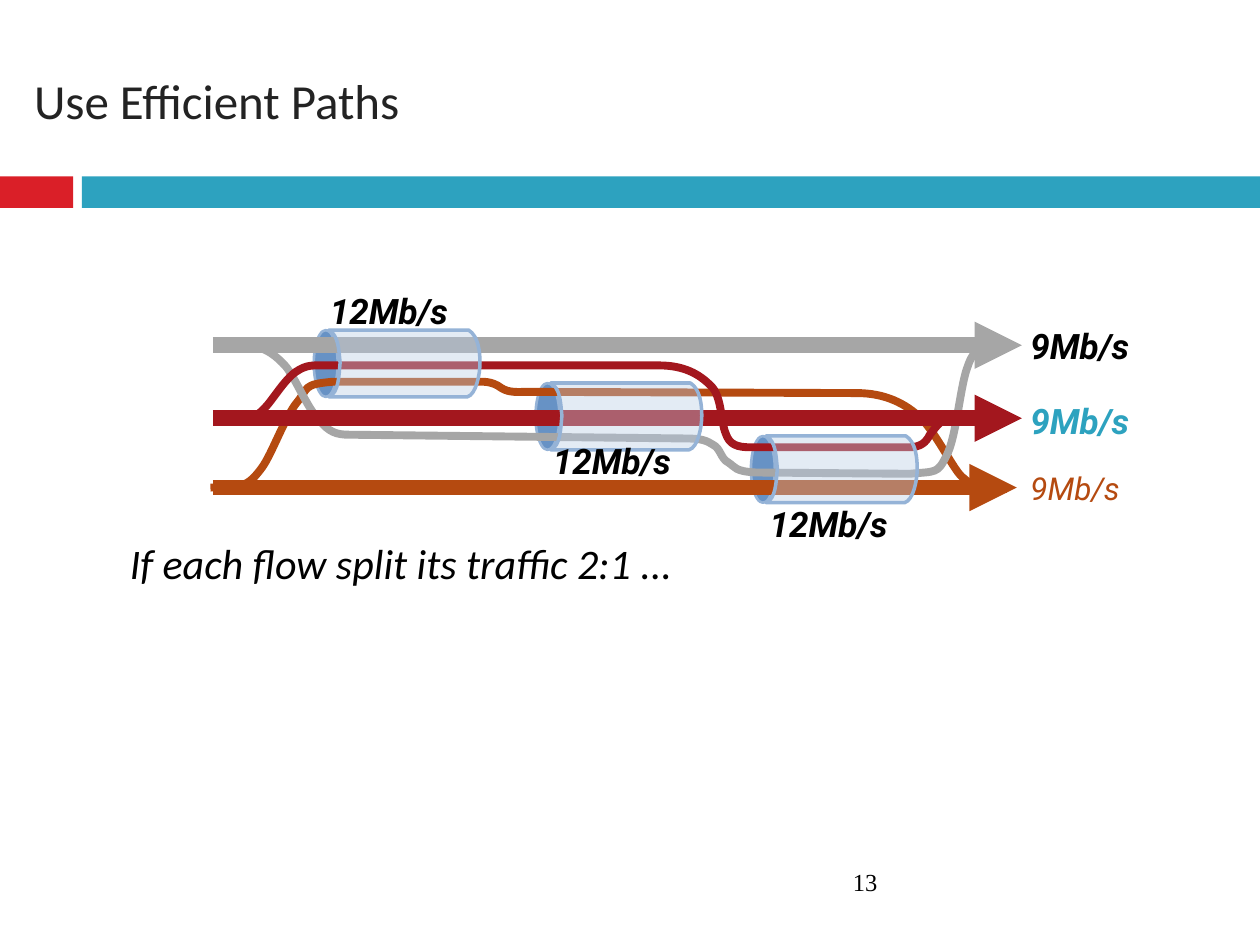
from dataclasses import dataclass

from lxml.etree import SubElement
from pptx import Presentation
from pptx.dml.color import RGBColor
from pptx.enum.shapes import MSO_CONNECTOR, MSO_SHAPE
from pptx.enum.text import MSO_ANCHOR, MSO_AUTO_SIZE, PP_ALIGN
from pptx.oxml.ns import qn
from pptx.util import Inches, Pt


@dataclass(frozen=True)
class Theme:
    black: str = "000000"
    title: str = "232323"
    red: str = "DA1F28"
    teal: str = "2DA2BF"
    orange: str = "B54A10"
    grey: str = "A6A6A6"
    crimson: str = "A3171E"
    pipe_fill: str = "B9CDE5"
    pipe_line: str = "95B3D7"
    pipe_end: str = "6792C5"
    title_size: int = 28
    body_size: int = 24
    label_size: int = 20
    small_label_size: int = 18
    number_size: int = 14
    text_font: str = "Calibri"
    label_font: str = "Roboto"
    number_font: str = "Times New Roman"


THEME = Theme()

FLOWS = [
    (THEME.orange, (1.69, 8.07), 3.87, [
        (1.67, 3.87), (1.89, 3.86),
        (1.96, 3.84, 2, 3.82, 2.08, 3.71), (2.16, 3.6, 2.26, 3.31, 2.36, 3.19),
        (2.45, 3.08, 2.4, 3.05, 2.64, 3.03), (3.77, 3.03),
        (3.83, 3.03, 3.9, 3.02, 3.98, 3.08), (4.04, 3.12, 4.12, 3.11, 4.18, 3.11),
        (6.8, 3.12), (7.02, 3.12, 7.19, 3.2, 7.32, 3.33),
        (7.44, 3.46, 7.56, 3.71, 7.63, 3.78), (7.7, 3.84, 7.75, 3.88, 7.85, 3.88),
        (7.99, 3.88)]),
    (THEME.grey, (1.69, 8.11), 2.74, [
        (1.8, 2.75), (2.04, 2.75),
        (2.12, 2.78, 2.18, 2.81, 2.27, 2.91), (2.35, 3.01, 2.44, 3.24, 2.53, 3.33),
        (2.61, 3.43, 2.67, 3.45, 2.77, 3.45), (5.44, 3.48),
        (5.58, 3.48, 5.61, 3.5, 5.66, 3.53), (5.72, 3.56, 5.72, 3.64, 5.78, 3.67),
        (5.84, 3.71, 5.83, 3.74, 6, 3.75), (7.22, 3.76),
        (7.43, 3.74, 7.44, 3.76, 7.51, 3.62), (7.59, 3.48, 7.62, 3.06, 7.68, 2.91),
        (7.73, 2.76, 7.79, 2.77, 7.85, 2.74), (8.01, 2.75)]),
    (THEME.crimson, (1.69, 8.11), 3.32, [
        (1.72, 3.33), (1.98, 3.32),
        (2.03, 3.3, 2.04, 3.3, 2.1, 3.24), (2.16, 3.18, 2.26, 3.01, 2.35, 2.95),
        (2.44, 2.89, 2.48, 2.9, 2.63, 2.9), (5.23, 2.9),
        (5.43, 2.9, 5.55, 2.97, 5.64, 3.06), (5.73, 3.14, 5.72, 3.35, 5.76, 3.44),
        (5.79, 3.53, 5.85, 3.55, 5.96, 3.55), (7.21, 3.55),
        (7.31, 3.55, 7.35, 3.51, 7.38, 3.45), (7.42, 3.4, 7.46, 3.34, 7.51, 3.33),
        (7.56, 3.33, 7.65, 3.33, 7.72, 3.33)]),
]
PIPE_OUTLINE = [
    (0, 0.53), (1.1, 0.53),
    (1.17, 0.51, 1.2, 0.35, 1.2, 0.26), (1.2, 0.18, 1.19, 0.05, 1.11, 0),
    (0, 0), (0.08, 0.04, 0.08, 0.17, 0.09, 0.26),
    (0.08, 0.36, 0.08, 0.5, 0, 0.53)]
PIPES = [(2.61, 2.62), (4.37, 3.04), (6.08, 3.46)]
PIPE_LABELS = [(2.52, 2.25), (4.29, 3.44), (6.01, 3.94)]


def color(value):
    return RGBColor.from_string(value)


def write_text(box, text, *, size, font, ink, bold=False, italic=False,
               anchor=MSO_ANCHOR.TOP, space_before=0, fit=MSO_AUTO_SIZE.NONE):
    frame = box.text_frame
    frame.word_wrap = True
    frame.auto_size = fit
    frame.vertical_anchor = anchor
    para = frame.paragraphs[0]
    para.alignment = PP_ALIGN.LEFT
    para.space_before = Pt(space_before)
    span = para.add_run()
    span.text = text
    span.font.size = Pt(size)
    span.font.name = font
    span.font.bold = bold
    span.font.italic = italic
    span.font.color.rgb = color(ink)
    return para


def place(box, left, top, width, height):
    box.left, box.top = Inches(left), Inches(top)
    box.width, box.height = Inches(width), Inches(height)


def add_label(page, text, left, top, width, height, **text_format):
    box = page.shapes.add_textbox(
        Inches(left), Inches(top), Inches(width), Inches(height))
    write_text(box, text, **text_format)


def paint(shape, fill=None, line=None, weight=0):
    shape.shadow.inherit = False
    if fill:
        shape.fill.solid()
        shape.fill.fore_color.rgb = color(fill)
    else:
        shape.fill.background()
    if line:
        shape.line.color.rgb = color(line)
        shape.line.width = Pt(weight)
    else:
        shape.line.fill.background()


def add_preset(page, kind, left, top, width, height, **style):
    shape = page.shapes.add_shape(
        kind, Inches(left), Inches(top), Inches(width), Inches(height))
    paint(shape, **style)
    return shape


def bend(straight, spots):
    curve = straight.makeelement(qn("a:cubicBezTo"))
    for x, y in spots:
        SubElement(curve, qn("a:pt"), x=str(x), y=str(y))
    straight.getparent().replace(straight, curve)


def add_outline(page, segments, left=0, top=0, closed=False, **style):
    routes = [[(Inches(left + x), Inches(top + y))
               for x, y in zip(segment[::2], segment[1::2])] for segment in segments]
    ends = [route[-1] for route in routes]
    builder = page.shapes.build_freeform(*ends[0])
    builder.add_line_segments(ends[1:], close=closed)
    shape = builder.convert_to_shape()
    straights = list(shape._element.spPr.iter(qn("a:lnTo")))
    for straight, route in zip(straights, routes[1:]):
        if len(route) == 3:
            bend(straight, [(x - shape.left, y - shape.top) for x, y in route])
    paint(shape, **style)
    return shape


def add_arrow(page, start, end, y, ink):
    arrow = page.shapes.add_connector(
        MSO_CONNECTOR.STRAIGHT, Inches(start), Inches(y), Inches(end), Inches(y))
    arrow.line.color.rgb = color(ink)
    arrow.line.width = Pt(9)
    properties = arrow._element.spPr
    SubElement(properties.find(qn("a:ln")), qn("a:tailEnd"), type="triangle")
    SubElement(properties, qn("a:effectLst"))


def add_pipe(page, left, top):
    pipe = add_outline(page, PIPE_OUTLINE, left, top, closed=True,
                       fill=THEME.pipe_fill, line=THEME.pipe_line, weight=2)
    tint = pipe._element.spPr.find(qn("a:solidFill"))[0]
    SubElement(tint, qn("a:alpha"), val="40000")


def add_pipe_end(page, left, top):
    end = add_preset(page, MSO_SHAPE.OVAL, left - 0.29, top + 0.17, 0.53, 0.19,
                     fill=THEME.pipe_end, line=THEME.pipe_line, weight=1.5)
    end.rotation = 270


def fill_placeholders(page):
    title, body = page.placeholders
    place(title, 0.17, 0.25, 9.67, 1.08)
    write_text(title, "Use Efficient Paths", size=THEME.title_size,
               font=THEME.text_font, ink=THEME.title, anchor=MSO_ANCHOR.MIDDLE)
    place(body, 0.93, 1.57, 8.5, 3.15)
    para = write_text(body, "If each flow split its traffic 2:1 ...",
                      size=THEME.body_size, font=THEME.text_font, ink=THEME.black,
                      italic=True, anchor=MSO_ANCHOR.BOTTOM, space_before=7)
    properties = para._p.get_or_add_pPr()
    properties.set("marL", "0")
    properties.set("indent", "0")
    SubElement(properties, qn("a:buNone"))


def add_labels(page):
    strong = dict(size=THEME.label_size, font=THEME.label_font, bold=True,
                  italic=True, fit=MSO_AUTO_SIZE.SHAPE_TO_FIT_TEXT)
    light = dict(strong, size=THEME.small_label_size, bold=False)
    for top, width, height, ink, style in [
            (2.53, 1.09, 0.44, THEME.black, strong),
            (3.12, 1.01, 0.4, THEME.teal, strong),
            (3.67, 1.01, 0.4, THEME.orange, light)]:
        add_label(page, "9Mb/s", 8.08, top, width, height, ink=ink, **style)
    for left, top in PIPE_LABELS:
        add_label(page, "12Mb/s", left, top, 1.27, 0.44, ink=THEME.black, **strong)
    add_label(page, "13", 6.67, 6.83, 2.92, 0.4, size=THEME.number_size,
              font=THEME.number_font, ink=THEME.black)


def main():
    deck = Presentation()
    deck.slide_width, deck.slide_height = Inches(10), Inches(7.5)
    page = deck.slides.add_slide(deck.slide_layouts[1])
    fill_placeholders(page)
    add_preset(page, MSO_SHAPE.RECTANGLE, 0, 1.4, 0.58, 0.25, fill=THEME.red)
    add_preset(page, MSO_SHAPE.RECTANGLE, 0.65, 1.4, 9.35, 0.25, fill=THEME.teal)
    for corner in PIPES:
        add_pipe_end(page, *corner)
    for ink, (start, end), y, route in FLOWS:
        add_arrow(page, start, end, y, ink)
        add_outline(page, route, line=ink, weight=4.5)
    for corner in PIPES:
        add_pipe(page, *corner)
    add_labels(page)
    deck.save("out.pptx")


if __name__ == "__main__":
    main()
